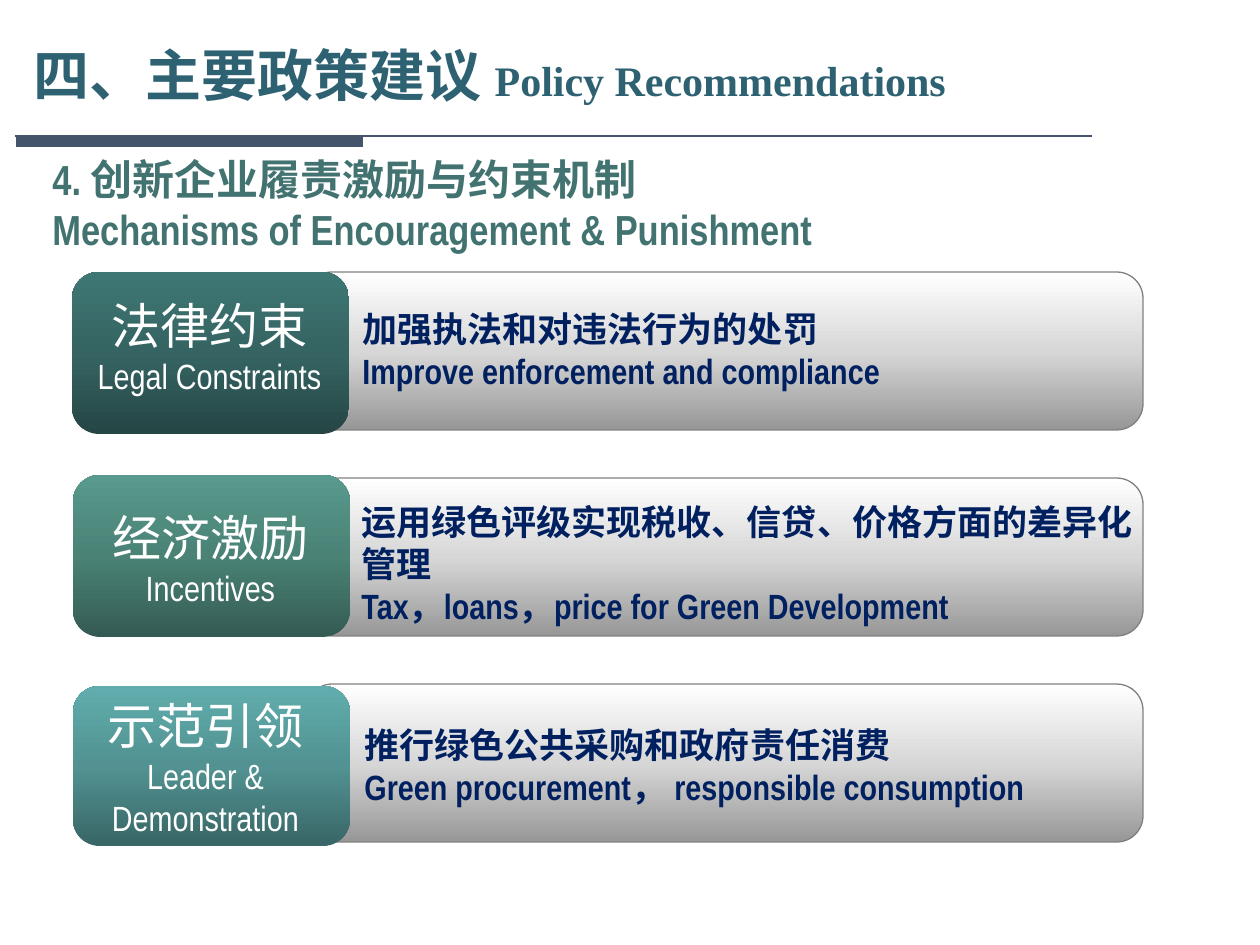
import copy

import pptx
import pptx.dml.color
import pptx.enum.shapes
import pptx.enum.text
import pptx.oxml.ns
import pptx.oxml.xmlchemy
import pptx.util

EMU_PER_PX = 914400 / 126
COLORS = {
    "rule": "44546A", "title": "2E6272", "heading": "427371",
    "label": "FFFFFF", "detail": "002060", "border": "808080",
}
GRADIENTS = {
    "panel": ("979797", "D7D7D7", "FFFFFF"),
    "legal": ("254645", "356462", "3E7774"),
    "incentive": ("345B53", "4A8276", "589A8D"),
    "leader": ("396666", "529292", "61ADAD"),
}
ALIGN = pptx.enum.text.PP_ALIGN
SHAPE = pptx.enum.shapes.MSO_SHAPE
PANEL_LEFT, PANEL_WIDTH, PANEL_HEIGHT = 306, 837, 158
FIRST_PANEL_TOP, PANEL_PITCH = 272, 206

MEASURES = [
    {
        "gradient": "legal",
        "tab": (-234, 0, 277, 162),
        "label_box": (-252, 17, 311, 115),
        "label": ("法律约束", "Legal Constraints"),
        "detail_box": (44, 29, 770, 97),
        "detail": ("加强执法和对违法行为的处罚", "Improve enforcement and compliance"),
    },
    {
        "gradient": "incentive",
        "tab": (-233, -3, 277, 162),
        "label_box": (-214, 23, 237, 115),
        "label": ("经济激励", "Incentives"),
        "detail_box": (43, 16, 804, 140),
        "detail": ("运用绿色评级实现税收、信贷、价格方面的差异化管理",
                   "Tax，loans，price for Green Development"),
    },
    {
        "gradient": "leader",
        "tab": (-233, 2, 277, 160),
        "label_box": (-253, 5, 305, 157),
        "label": ("示范引领", "Leader & Demonstration"),
        "detail_box": (46, 33, 776, 97),
        "detail": ("推行绿色公共采购和政府责任消费",
                   "Green procurement， responsible consumption"),
    },
]


def px(*lengths):
    """Turn pixel lengths into EMU."""
    return [pptx.util.Emu(round(length * EMU_PER_PX)) for length in lengths]


def rgb(name):
    """Look up a named colour."""
    return pptx.dml.color.RGBColor.from_string(COLORS[name])


def set_font(font, size, color, bold=False, face="Arial Narrow"):
    """Style a paragraph or run font."""
    font.name, font.size, font.bold = face, pptx.util.Pt(size), bold
    font.color.rgb = rgb(color)


def add_text(slide, box, lines, sizes, color, bold=False, align=ALIGN.LEFT):
    """Add a wrapped text box with one paragraph per line."""
    frame = slide.shapes.add_textbox(*px(*box)).text_frame
    frame.word_wrap = True
    frame.text = "\n".join(lines)
    for paragraph, size in zip(frame.paragraphs, sizes):
        paragraph.alignment = align
        set_font(paragraph.font, size, color, bold)
    return frame


def add_gradient_bar(slide, box, gradient):
    """Add a rounded bar shaded from bottom to top."""
    bar = slide.shapes.add_shape(SHAPE.ROUNDED_RECTANGLE, *px(*box))
    bar.shadow.inherit = False
    bar.line.fill.background()
    bar.fill.gradient()
    bar.fill.gradient_angle = 90
    first_stop = bar._element.spPr.find(".//" + pptx.oxml.ns.qn("a:gs"))
    first_stop.addnext(copy.deepcopy(first_stop))
    for stop, position, color in zip(bar.fill.gradient_stops, (0, 0.5, 1), GRADIENTS[gradient]):
        stop.position = position
        stop.color.rgb = pptx.dml.color.RGBColor.from_string(color)
    return bar


def add_title(slide, box):
    """Place the bilingual title with its rule and accent bar."""
    left, top, width, height = box
    frame = slide.shapes.add_textbox(*px(*box)).text_frame
    frame.word_wrap = True
    frame.vertical_anchor = pptx.enum.text.MSO_ANCHOR.MIDDLE
    paragraph = frame.paragraphs[0]
    paragraph.line_spacing = 0.9
    for text, size in (("四、主要政策建议 ", 32), ("Policy Recommendations", 24)):
        run = paragraph.add_run()
        run.text = text
        set_font(run.font, size, "title", True, "Times New Roman")

    rule_top = top + height - 10
    rule = slide.shapes.add_connector(
        pptx.enum.shapes.MSO_CONNECTOR.STRAIGHT,
        *px(left - 6, rule_top, left + width - 15, rule_top))
    rule.line.color.rgb = rgb("rule")
    rule.line.width = pptx.util.Pt(1.5)
    rule._element.spPr.append(pptx.oxml.xmlchemy.OxmlElement("a:effectLst"))

    accent = slide.shapes.add_shape(SHAPE.RECTANGLE, *px(left - 5, rule_top + 1, 347, 10))
    accent.shadow.inherit = False
    accent.fill.solid()
    accent.fill.fore_color.rgb = rgb("rule")
    accent.line.fill.background()


def add_heading(slide, box):
    """Place the numbered section heading with a hanging indent."""
    lines = ("4. 创新企业履责激励与约束机制", "Mechanisms of Encouragement & Punishment")
    frame = add_text(slide, box, lines, (24, 24), "heading", True, ALIGN.JUSTIFY)
    indent = px(48)[0]
    properties = frame.paragraphs[0]._p.get_or_add_pPr()
    properties.set("marL", str(indent))
    properties.set("indent", str(-indent))


def add_measure(slide, box, measure):
    """Place one measure: grey panel, coloured tab, label and detail."""
    left, top = box[:2]

    def inside(part):
        """Shift a part's box to the panel's corner."""
        x, y, width, height = measure[part]
        return left + x, top + y, width, height

    panel = add_gradient_bar(slide, box, "panel")
    panel.line.color.rgb = rgb("border")
    panel.line.width = pptx.util.Pt(0.75)
    add_gradient_bar(slide, inside("tab"), measure["gradient"])
    add_text(slide, inside("label_box"), measure["label"], (28, 20), "label", align=ALIGN.CENTER)
    add_text(slide, inside("detail_box"), measure["detail"], (20, 20), "detail", True)


def main():
    """Build and save the slide."""
    deck = pptx.Presentation()
    deck.slide_width, deck.slide_height = px(1260, 945)
    slide = deck.slides.add_slide(deck.slide_layouts[6])
    add_title(slide, (21, 11, 1086, 135))
    add_heading(slide, (40, 147, 1181, 112))
    for row, measure in enumerate(MEASURES):
        top = FIRST_PANEL_TOP + row * PANEL_PITCH
        add_measure(slide, (PANEL_LEFT, top, PANEL_WIDTH, PANEL_HEIGHT), measure)
    deck.save("out.pptx")


if __name__ == "__main__":
    main()
